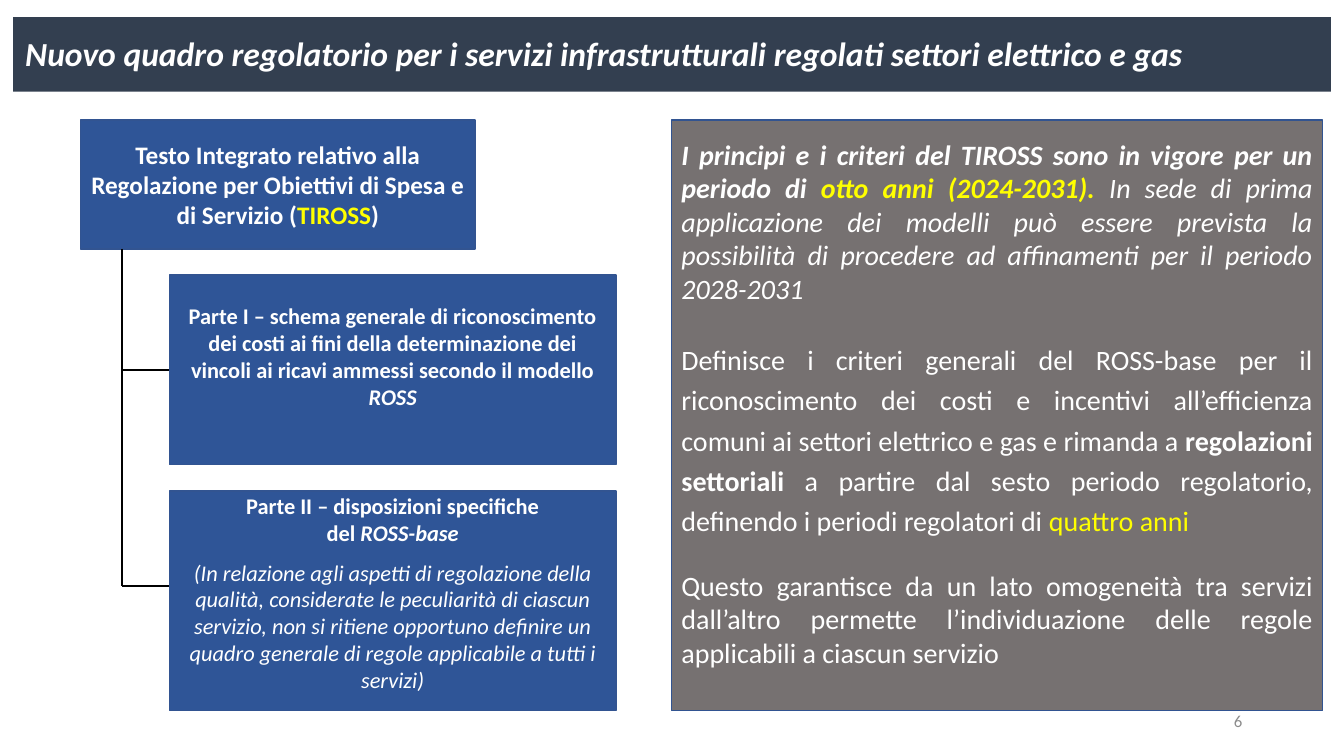
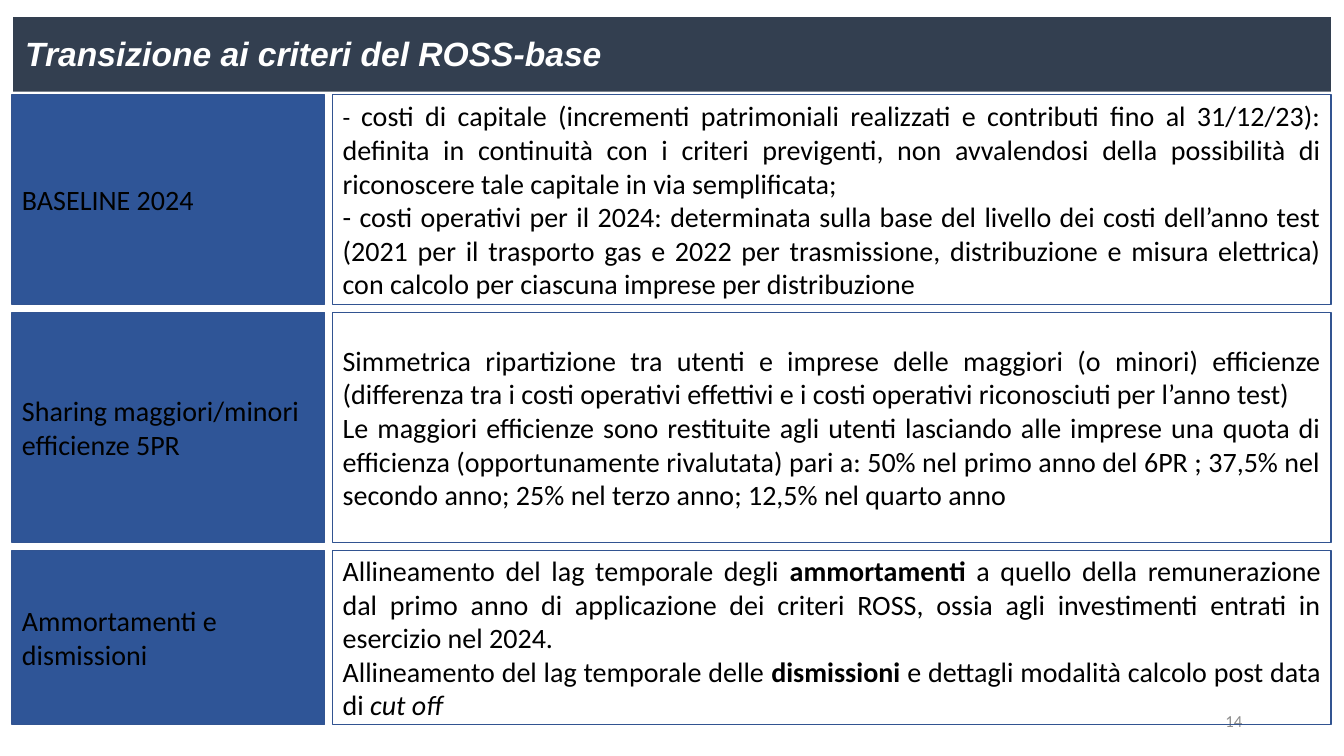
from dataclasses import dataclass

from lxml.etree import SubElement
from pptx import Presentation
from pptx.dml.color import RGBColor
from pptx.enum.shapes import MSO_CONNECTOR, MSO_SHAPE
from pptx.enum.text import MSO_ANCHOR, MSO_AUTO_SIZE, PP_ALIGN
from pptx.oxml.ns import qn
from pptx.util import Inches, Pt


@dataclass(frozen=True)
class Theme:
    """Colours, fonts and type sizes shared by all pages."""
    band: str = "333F50"
    blue: str = "2F5597"
    outline: str = "325491"
    grey: str = "767171"
    white: str = "FFFFFF"
    black: str = "000000"
    yellow: str = "FFFF00"
    number: str = "8C8C8C"
    font: str = "Calibri"
    title_size: int = 24
    body_size: int = 20
    head_size: int = 18
    part_size: int = 16
    number_size: int = 12


THEME = Theme()


@dataclass(frozen=True)
class Span:
    """A run of text and what sets it apart."""
    text: str
    bold: bool = False
    italic: bool = False
    color: str = None
    size: int = None


@dataclass(frozen=True)
class Para:
    """A paragraph of spans with its spacing."""
    spans: tuple
    before: int = 0
    line: float = 1.0


def para(*spans, **spacing):
    """Make a paragraph from spans or plain strings."""
    return Para(tuple(Span(s) if isinstance(s, str) else s for s in spans), **spacing)


class Deck:
    """Holds the style and the current page, and draws its elements."""

    def __init__(self, theme):
        """Start an empty widescreen deck."""
        self.theme = theme
        self.deck = Presentation()
        self.deck.slide_width, self.deck.slide_height = Inches(13.33), Inches(7.5)
        self.page = None

    def add_page(self, title, number, title_font=None):
        """Add a page with its title band and page number."""
        theme = self.theme
        self.page = self.deck.slides.add_slide(self.deck.slide_layouts[5])
        band = self.page.shapes.title
        band.left, band.top = Inches(0.13), Inches(0.17)
        band.width, band.height = Inches(13.07), Inches(0.74)
        band.fill.solid()
        band.fill.fore_color.rgb = RGBColor.from_string(theme.band)
        self.set_text(band, [para(Span(title, bold=True, italic=True))], theme.title_size,
                      theme.white, PP_ALIGN.LEFT, MSO_ANCHOR.TOP, (0.12, 0.16, 0.1, 0),
                      title_font)
        box = self.page.shapes.add_textbox(Inches(9.42), Inches(6.95), Inches(3), Inches(0.4))
        self.set_text(box, [para(str(number))], theme.number_size, theme.number,
                      PP_ALIGN.RIGHT)

    def set_text(self, shape, paras, size, color, align, anchor=MSO_ANCHOR.MIDDLE,
                 insets=(0.1, 0.05, 0.1, 0.05), font=None):
        """Fill a shape with paragraphs, run by run."""
        frame = shape.text_frame
        frame.word_wrap = True
        frame.auto_size = MSO_AUTO_SIZE.NONE
        frame.vertical_anchor = anchor
        frame.margin_left, frame.margin_top, frame.margin_right, frame.margin_bottom = map(
            Inches, insets)
        for index, item in enumerate(paras):
            paragraph = frame.add_paragraph() if index else frame.paragraphs[0]
            paragraph.alignment = align
            paragraph.space_before = Pt(item.before)
            paragraph.line_spacing = item.line
            for span in item.spans:
                for row, text in enumerate(span.text.split("\n")):
                    if row:
                        paragraph.add_line_break()
                    run = paragraph.add_run()
                    run.text = text
                    run.font.name = font or self.theme.font
                    run.font.size = Pt(span.size or size)
                    run.font.bold, run.font.italic = span.bold, span.italic
                    run.font.color.rgb = RGBColor.from_string(span.color or color)

    def box(self, left, top, width, height, paras, fill=None, size=None, color=None,
            align=PP_ALIGN.JUSTIFY, **layout):
        """Draw an outlined rectangle with text."""
        theme = self.theme
        box = self.page.shapes.add_shape(
            MSO_SHAPE.RECTANGLE, *map(Inches, (left, top, width, height)))
        box.shadow.inherit = False
        if fill:
            box.fill.solid()
            box.fill.fore_color.rgb = RGBColor.from_string(fill)
        else:
            box.fill.background()
        box.line.color.rgb = RGBColor.from_string(theme.outline)
        box.line.width = Pt(1)
        self.set_text(box, paras, size or theme.body_size, color or theme.black, align,
                      **layout)
        return box

    def line(self, start, end, target=None):
        """Draw a straight line, joined to the left side of a target if given."""
        line = self.page.shapes.add_connector(
            MSO_CONNECTOR.STRAIGHT, *map(Inches, (*start, *end)))
        line.line.color.rgb = RGBColor.from_string(self.theme.black)
        line.line.width = Pt(1.5)
        SubElement(line._element.spPr, qn("a:effectLst"))
        if target is not None:
            line.end_connect(target, 1)


def build_framework(deck):
    """Build the page on the regulatory framework."""
    theme = deck.theme
    deck.add_page("Nuovo quadro regolatorio per i servizi infrastrutturali regolati "
                  "settori elettrico e gas", 6)
    blue = dict(fill=theme.blue, color=theme.white, align=PP_ALIGN.CENTER)
    deck.box(0.8, 1.19, 3.91, 1.28, [para(
        Span("Testo Integrato relativo alla Regolazione per Obiettivi di Spesa "
             "e di Servizio (", bold=True),
        Span("TIROSS", bold=True, color=theme.yellow),
        Span(")", bold=True))], size=theme.head_size, **blue)

    part_left, part_width = 1.68, 4.43
    part_one = deck.box(part_left, 2.73, part_width, 1.88, [para(
        Span("Parte I – schema generale di riconoscimento dei costi ai fini della "
             "determinazione dei vincoli ai ricavi ammessi secondo il modello ", bold=True),
        Span("ROSS", bold=True, italic=True))],
        size=theme.part_size, insets=(0.1, 0.05, 0.1, 0.32), **blue)
    deck.box(part_left, 4.87, part_width, 2.18, [
        para(Span("Parte II – disposizioni specifiche\ndel ", bold=True),
             Span("ROSS-base", bold=True, italic=True)),
        para(Span("(In relazione agli aspetti di regolazione della qualità, considerate le "
                  "peculiarità di ciascun servizio, non si ritiene opportuno definire un "
                  "quadro generale di regole applicabile a tutti i servizi)", italic=True),
             before=9)],
        size=theme.part_size, insets=(0.1, 0, 0.1, 0.16), **blue)

    trunk, foot = 1.21, 5.81
    deck.line((trunk, 2.47), (trunk, foot))
    deck.line((trunk, 3.67), (part_left, 3.67), part_one)
    deck.line((trunk, foot), (part_left, foot))

    deck.box(6.66, 1.19, 6.46, 5.86, [
        para(Span("I principi e i criteri del TIROSS sono in vigore per un periodo di ",
                  bold=True, italic=True),
             Span("otto anni (2024-2031). ", bold=True, italic=True, color=theme.yellow),
             Span("In sede di prima applicazione dei modelli può essere prevista la "
                  "possibilità di procedere ad affinamenti per il periodo 2028-2031",
                  italic=True)),
        para("Definisce i criteri generali del ROSS-base per il riconoscimento dei costi e "
             "incentivi all’efficienza comuni ai settori elettrico e gas e rimanda a ",
             Span("regolazioni settoriali ", bold=True),
             "a partire dal sesto periodo regolatorio, definendo i periodi regolatori di ",
             Span("quattro anni", color=theme.yellow), before=22, line=1.2),
        para("Questo garantisce da un lato omogeneità tra servizi dall’altro permette "
             "l’individuazione delle regole applicabili a ciascun servizio", before=22)],
        fill=theme.grey, color=theme.white, insets=(0.1, 0.05, 0.1, 0.29))


def build_transition(deck):
    """Build the page on the transition criteria."""
    theme = deck.theme
    deck.add_page("Transizione ai criteri del ROSS-base", 14, "Arial")
    rows = [
        (2.08, "BASELINE 2024", [
            para(Span("- ", size=theme.head_size),
                 "costi di capitale (incrementi patrimoniali realizzati e contributi fino al "
                 "31/12/23): definita in continuità con i criteri previgenti, non avvalendosi "
                 "della possibilità di riconoscere tale capitale in via semplificata;"),
            para("- costi operativi per il 2024: determinata sulla base del livello dei costi "
                 "dell’anno test (2021 per il trasporto gas e 2022 per trasmissione, "
                 "distribuzione e misura elettrica) con calcolo per ciascuna imprese per "
                 "distribuzione")]),
        (2.28, "Sharing maggiori/minori efficienze 5PR", [
            para("Simmetrica ripartizione tra utenti e imprese delle maggiori (o minori) "
                 "efficienze (differenza tra i costi operativi effettivi e i costi operativi "
                 "riconosciuti per l’anno test)"),
            para("Le maggiori efficienze sono restituite agli utenti lasciando alle imprese "
                 "una quota di efficienza (opportunamente rivalutata) pari a: 50% nel primo "
                 "anno del 6PR ; 37,5% nel secondo anno; 25% nel terzo anno; 12,5% nel "
                 "quarto anno")]),
        (1.73, "Ammortamenti e dismissioni", [
            para("Allineamento del lag temporale degli ", Span("ammortamenti", bold=True),
                 " a quello della remunerazione dal primo anno di applicazione dei criteri "
                 "ROSS, ossia agli investimenti entrati in esercizio nel 2024."),
            para("Allineamento del lag temporale delle ", Span("dismissioni", bold=True),
                 " e dettagli modalità calcolo post data di ",
                 Span("cut off", italic=True))]),
    ]
    top, gap = 0.94, 0.08
    for height, label, paras in rows:
        deck.box(0.12, top, 3.1, height, [para(label)], fill=theme.blue, align=PP_ALIGN.LEFT)
        deck.box(3.3, top, 9.9, height, paras)
        top += height + gap


def main():
    """Build and save the deck."""
    deck = Deck(THEME)
    build_framework(deck)
    build_transition(deck)
    deck.deck.save("out.pptx")


if __name__ == "__main__":
    main()
